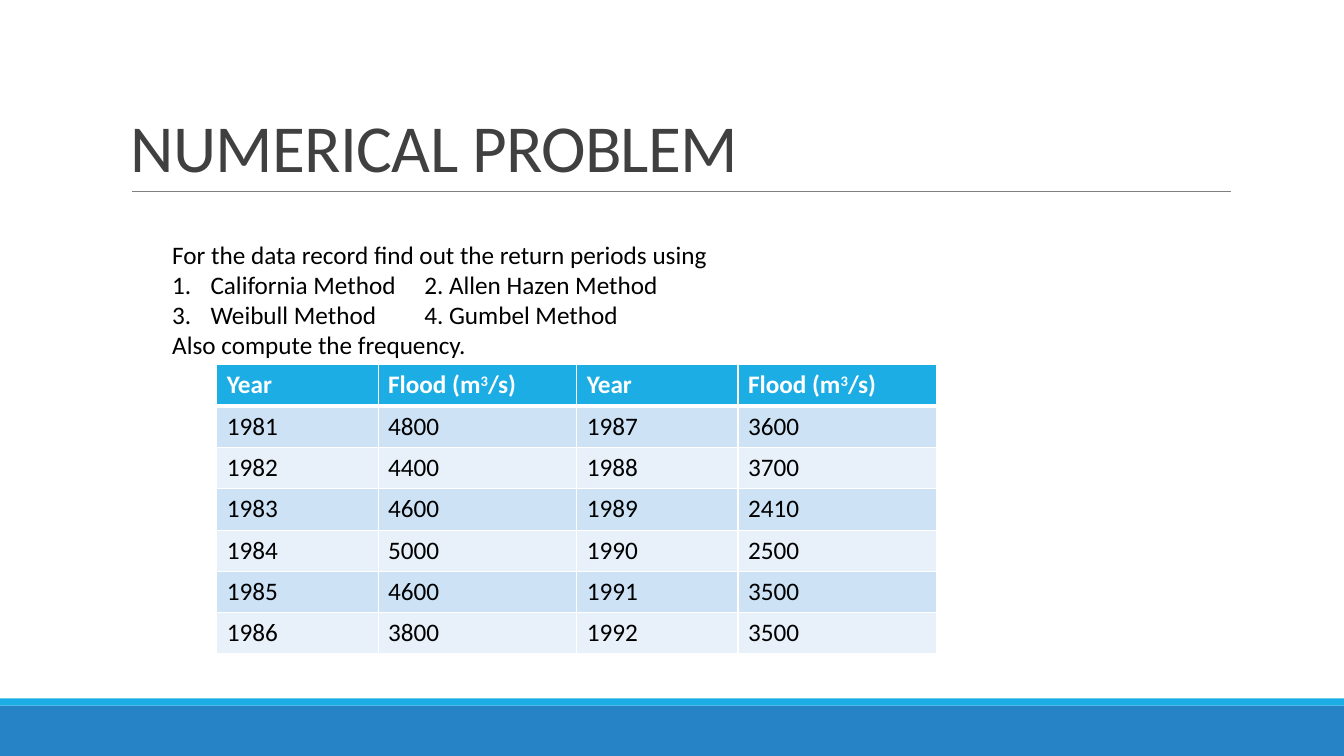
import pptx
import pptx.util
import pptx.dml.color
import pptx.enum.shapes
import pptx.enum.text
import pptx.oxml
import pptx.oxml.ns
import lxml.etree

Inches = pptx.util.Inches
FONT = "Calibri"
WIDTH, HEIGHT = 13.33, 7.5
BLUE, CYAN, WHITE, BLACK = "2683C6", "1CADE4", "FFFFFF", "000000"
BANDS = ["CDE3F5", "E8F1FA"]
HEADINGS = [["Year"], ["Flood (m", "3", "/s)"]]
FLOODS = [
    [(1981, 4800), (1982, 4400), (1983, 4600), (1984, 5000), (1985, 4600), (1986, 3800)],
    [(1987, 3600), (1988, 3700), (1989, 2410), (1990, 2500), (1991, 3500), (1992, 3500)],
]
COLUMNS = [1.6, 1.97]
ROW_HEIGHT = 0.41


def color(value):
    return pptx.dml.color.RGBColor.from_string(value)


def add_span(para, text, size=18, hue=BLACK, bold=False, raised=False, spacing=None):
    span = para.add_run()
    span.text = text
    span.font.name = FONT
    span.font.size = pptx.util.Pt(size)
    span.font.bold = bold
    span.font.color.rgb = color(hue)
    if raised:
        span.font._element.set("baseline", "30000")
    if spacing is not None:
        span.font._element.set("spc", str(int(spacing * 100)))


def add_box(page, left, top, width, height):
    return page.shapes.add_textbox(
        Inches(left), Inches(top), Inches(width), Inches(height)).text_frame


def number_para(para, start):
    """Gives the paragraph an automatic number with a hanging indent."""
    props = para._p.get_or_add_pPr()
    props.set("marL", str(Inches(0.38)))
    props.set("indent", str(-Inches(0.38)))
    bullet = lxml.etree.SubElement(props, pptx.oxml.ns.qn("a:buAutoNum"))
    bullet.set("type", "arabicPeriod")
    bullet.set("startAt", str(start))


def set_borders(cell, **widths):
    """Draws white cell borders; widths in points by side L, R, T, B."""
    props = cell._tc.get_or_add_tcPr()
    for side in "LRTB":
        props.append(pptx.oxml.parse_xml(
            f'<a:ln{side} {pptx.oxml.ns.nsdecls("a")} w="{pptx.util.Pt(widths.get(side, 1))}">'
            f'<a:solidFill><a:srgbClr val="{WHITE}"/></a:solidFill></a:ln{side}>'))


def add_footer(page, top):
    stripe = 0.07
    for y, height, fill in [(top + stripe, HEIGHT - top - stripe, BLUE), (top, stripe, CYAN)]:
        bar = page.shapes.add_shape(
            pptx.enum.shapes.MSO_SHAPE.RECTANGLE,
            0, Inches(y), Inches(WIDTH), Inches(height))
        bar.shadow.inherit = False
        bar.fill.solid()
        bar.fill.fore_color.rgb = color(fill)
        bar.line.fill.background()


def add_title(page, left, top, width, height):
    rule = page.shapes.add_connector(
        pptx.enum.shapes.MSO_CONNECTOR.STRAIGHT, Inches(left + 0.11),
        Inches(top + height), Inches(left + width + 0.01), Inches(top + height))
    rule.line.color.rgb = color("808080")
    rule.line.width = pptx.util.Pt(0.5)
    lxml.etree.SubElement(rule._element.spPr, pptx.oxml.ns.qn("a:effectLst"))
    frame = add_box(page, left, top, width, height)
    frame.word_wrap = True
    frame.vertical_anchor = pptx.enum.text.MSO_ANCHOR.BOTTOM
    para = frame.paragraphs[0]
    para.line_spacing = 0.85
    add_span(para, "NUMERICAL PROBLEM", size=48, hue="404040", spacing=-0.5)


def add_question(page, left, top, width, height):
    frame = add_box(page, left, top, width, height)
    frame.word_wrap = False
    lines = [
        ("For the data record find out the return periods using", None),
        ("California Method\t2. Allen Hazen Method", 1),
        ("Weibull Method \t4. Gumbel Method", 3),
        ("Also compute the frequency.", None),
    ]
    for index, (text, number) in enumerate(lines):
        para = frame.add_paragraph() if index else frame.paragraphs[0]
        if number:
            number_para(para, number)
        add_span(para, text)


def add_flood_table(page, left, top, records):
    rows = [HEADINGS] + [[[str(value)] for value in record] for record in records]
    table = page.shapes.add_table(
        len(rows), len(COLUMNS), Inches(left), Inches(top),
        Inches(sum(COLUMNS)), Inches(ROW_HEIGHT * len(rows))).table
    for column, width in zip(table.columns, COLUMNS):
        column.width = Inches(width)
    for r, row in enumerate(rows):
        table.rows[r].height = Inches(ROW_HEIGHT)
        header = r == 0
        for c, parts in enumerate(row):
            cell = table.cell(r, c)
            set_borders(cell, T=3 if r == 1 else 1, B=3 if header else 1)
            cell.fill.solid()
            cell.fill.fore_color.rgb = color(CYAN if header else BANDS[(r - 1) % 2])
            for part in parts:
                add_span(cell.text_frame.paragraphs[0], part, bold=header,
                         hue=WHITE if header else BLACK, raised=part == "3")


def main():
    deck = pptx.Presentation()
    deck.slide_width, deck.slide_height = Inches(WIDTH), Inches(HEIGHT)
    page = deck.slides.add_slide(deck.slide_layouts[6])
    add_footer(page, 6.93)
    add_title(page, 1.2, 0.31, 11, 1.59)
    for index, records in enumerate(FLOODS):
        add_flood_table(page, 2.15 + index * sum(COLUMNS), 3.62, records)
    add_question(page, 1.61, 2.32, 5.63, 1.31)
    deck.save("out.pptx")


if __name__ == "__main__":
    main()
